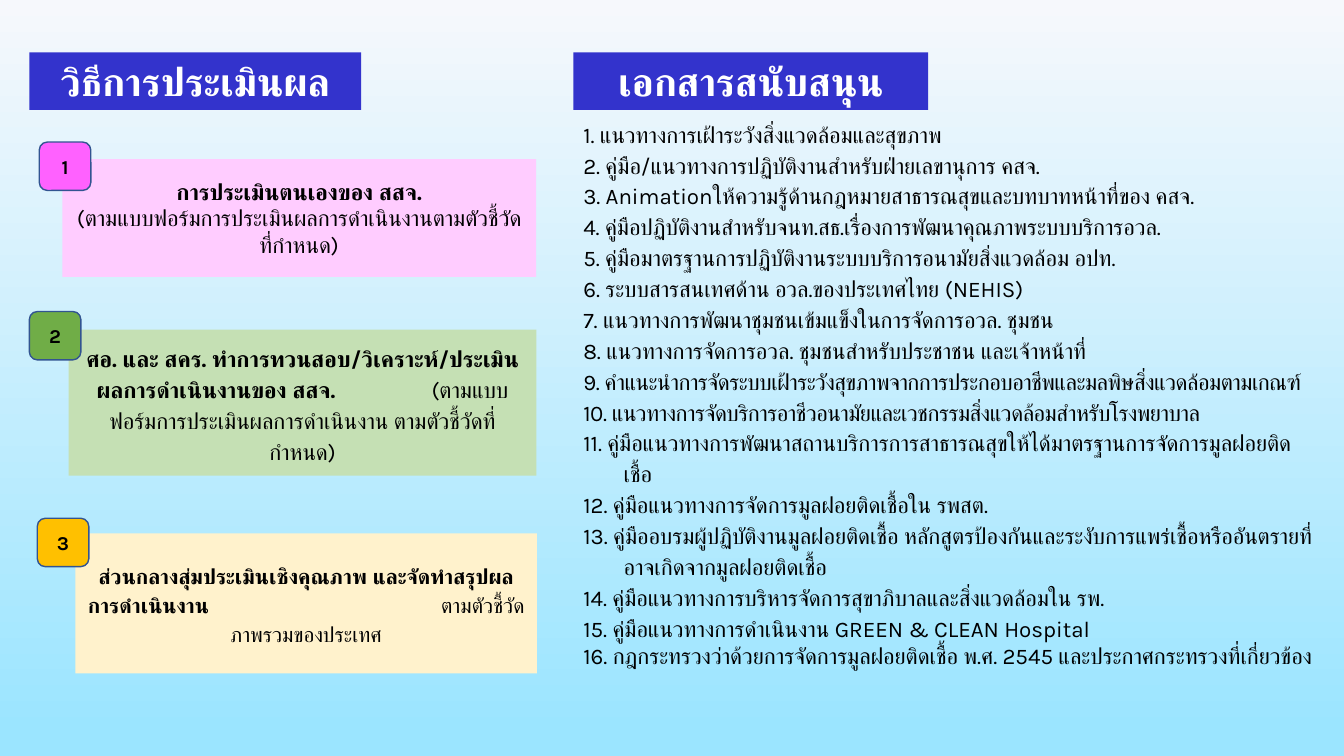
"""Build the slide on evaluation methods and supporting documents."""
import pptx
import pptx.dml.color
import pptx.enum.shapes
import pptx.enum.text
import pptx.util
from lxml import etree

Cm = pptx.util.Cm
Pt = pptx.util.Pt
RGBColor = pptx.dml.color.RGBColor
RECTANGLE = pptx.enum.shapes.MSO_SHAPE.RECTANGLE
ROUNDED = pptx.enum.shapes.MSO_SHAPE.ROUNDED_RECTANGLE
CENTER = pptx.enum.text.PP_ALIGN.CENTER
DRAWING = "http://schemas.openxmlformats.org/drawingml/2006/main"
FONT = "Karla"
COLORS = {
    "sky_top": "F6F8FC", "sky_bottom": "9BE5FF", "header": "3333CC",
    "white": "FFFFFF", "black": "000000", "badge_line": "325491",
    "pink": "FFCCFF", "pink_badge": "FF61FF",
    "green": "C5E0B4", "green_badge": "70AD47",
    "yellow": "FFF2CC", "yellow_badge": "FFC000",
}

presentation = pptx.Presentation()
presentation.slide_width, presentation.slide_height = Cm(33.87), Cm(19.05)
slide = presentation.slides.add_slide(presentation.slide_layouts[6])


def add_block(kind, left, top, width, height, fill):
    """Add a filled shape without line or shadow."""
    shape = slide.shapes.add_shape(kind, Cm(left), Cm(top), Cm(width), Cm(height))
    shape.shadow.inherit = False
    shape.fill.solid()
    shape.fill.fore_color.rgb = RGBColor.from_string(COLORS[fill])
    shape.line.fill.background()
    return shape


def style_paragraph(paragraph, size, color="black", bold=None, align=CENTER):
    """Set the font and alignment of a paragraph."""
    paragraph.alignment = align
    paragraph.font.name = FONT
    paragraph.font.size = Pt(size)
    paragraph.font.color.rgb = RGBColor.from_string(COLORS[color])
    if bold is not None:
        paragraph.font.bold = bold


background = add_block(RECTANGLE, 0, 0, 33.87, 19.05, "sky_top")
background.fill.gradient()
background.fill.gradient_angle = 270
stops = background.fill.gradient_stops
for stop, position, color in zip(stops, (0, 0.97), ("sky_top", "sky_bottom")):
    stop.position = position
    stop.color.rgb = RGBColor.from_string(COLORS[color])

for left, width, title in (
    (0.74, 8.36, "วิธีการประเมินผล"),
    (14.45, 8.94, "เอกสารสนับสนุน"),
):
    header = add_block(ROUNDED, left, 1.32, width, 1.45, "header")
    header.adjustments[0] = 0
    paragraph = header.text_frame.paragraphs[0]
    paragraph.text = title
    style_paragraph(paragraph, 28, "white", True)

steps = [
    ((1.57, 4.01, 11.94, 2.97), (0.99, 3.58), "pink", 16, None,
     "การประเมินตนเองของ สสจ.",
     "(ตามแบบฟอร์มการประเมินผลการดำเนินงานตามตัวชี้วัดที่กำหนด)"),
    ((1.73, 8.31, 11.79, 3.68), (0.74, 7.85), "green", 16, 8.44,
     "ศอ. และ สคร. ทำการทวนสอบ/วิเคราะห์/ประเมินผลการดำเนินงานของ สสจ.",
     "(ตามแบบฟอร์มการประเมินผลการดำเนินงาน ตามตัวชี้วัดที่กำหนด)"),
    ((1.9, 13.44, 11.63, 3.53), (0.94, 13.06), "yellow", 15, 8.9,
     "ส่วนกลางสุ่มประเมินเชิงคุณภาพ และจัดทำสรุปผลการดำเนินงาน",
     "ตามตัวชี้วัดภาพรวมของประเทศ"),
]
for number, (box, corner, color, size, tab, lead, detail) in enumerate(steps, 1):
    frame = add_block(RECTANGLE, *box, color).text_frame
    first = last = frame.paragraphs[0]
    if tab:
        tab_list = etree.SubElement(
            first._p.get_or_add_pPr(), f"{{{DRAWING}}}tabLst")
        etree.SubElement(
            tab_list, f"{{{DRAWING}}}tab", pos=str(int(Cm(tab))), algn="l")
        first.line_spacing = 1.15
        detail = "\t" + detail
    else:
        last = frame.add_paragraph()
    for paragraph, text, bold in ((first, lead, True), (last, detail, False)):
        style_paragraph(paragraph, size)
        run = paragraph.add_run()
        run.text = text
        run.font.bold = bold

    badge = add_block(ROUNDED, *corner, 1.3, 1.22, color + "_badge")
    badge.line.color.rgb = RGBColor.from_string(COLORS["badge_line"])
    badge.line.width = Pt(1)
    paragraph = badge.text_frame.paragraphs[0]
    paragraph.text = str(number)
    style_paragraph(paragraph, 14, bold=True)

documents = [
    "แนวทางการเฝ้าระวังสิ่งแวดล้อมและสุขภาพ",
    "คู่มือ/แนวทางการปฏิบัติงานสำหรับฝ่ายเลขานุการ คสจ.",
    "Animationให้ความรู้ด้านกฎหมายสาธารณสุขและบทบาทหน้าที่ของ คสจ.",
    "คู่มือปฏิบัติงานสำหรับจนท.สธ.เรื่องการพัฒนาคุณภาพระบบบริการอวล.",
    "คู่มือมาตรฐานการปฏิบัติงานระบบบริการอนามัยสิ่งแวดล้อม อปท.",
    "ระบบสารสนเทศด้าน อวล.ของประเทศไทย (NEHIS)",
    "แนวทางการพัฒนาชุมชนเข้มแข็งในการจัดการอวล. ชุมชน",
    "แนวทางการจัดการอวล. ชุมชนสำหรับประชาชน และเจ้าหน้าที่",
    "คำแนะนำการจัดระบบเฝ้าระวังสุขภาพจากการประกอบอาชีพและมลพิษสิ่งแวดล้อมตามเกณฑ์",
    "แนวทางการจัดบริการอาชีวอนามัยและเวชกรรมสิ่งแวดล้อมสำหรับโรงพยาบาล",
    "คู่มือแนวทางการพัฒนาสถานบริการการสาธารณสุขให้ได้มาตรฐานการจัดการมูลฝอยติดเชื้อ",
    "คู่มือแนวทางการจัดการมูลฝอยติดเชื้อใน รพสต.",
    "คู่มืออบรมผู้ปฏิบัติงานมูลฝอยติดเชื้อ "
    "หลักสูตรป้องกันและระงับการแพร่เชื้อหรืออันตรายที่อาจเกิดจากมูลฝอยติดเชื้อ",
    "คู่มือแนวทางการบริหารจัดการสุขาภิบาลและสิ่งแวดล้อมใน รพ.",
    "คู่มือแนวทางการดำเนินงาน GREEN & CLEAN Hospital",
    "กฎกระทรวงว่าด้วยการจัดการมูลฝอยติดเชื้อ พ.ศ. 2545 และประกาศกระทรวงที่เกี่ยวข้อง",
]
hanging_indents = {9: 0.51, 11: 1.02, 13: 1.02, 16: 1.02}
condensed_items = (9, 10)
document_list = slide.shapes.add_textbox(Cm(14.45), Cm(2.82), Cm(18.87), Cm(15.77))
frame = document_list.text_frame
frame.word_wrap = True
for number, document in enumerate(documents, 1):
    paragraph = frame.paragraphs[0] if number == 1 else frame.add_paragraph()
    paragraph.text = f"{number}. {document}"
    style_paragraph(paragraph, 16, align=pptx.enum.text.PP_ALIGN.LEFT)
    if number < len(documents):
        paragraph.line_spacing = 1.15
    if number in hanging_indents:
        indent = int(Cm(hanging_indents[number]))
        properties = paragraph._p.get_or_add_pPr()
        properties.set("marL", str(indent))
        properties.set("indent", str(-indent))
    if number in condensed_items:
        paragraph.runs[0]._r.get_or_add_rPr().set("spc", "-30")

presentation.save("out.pptx")
